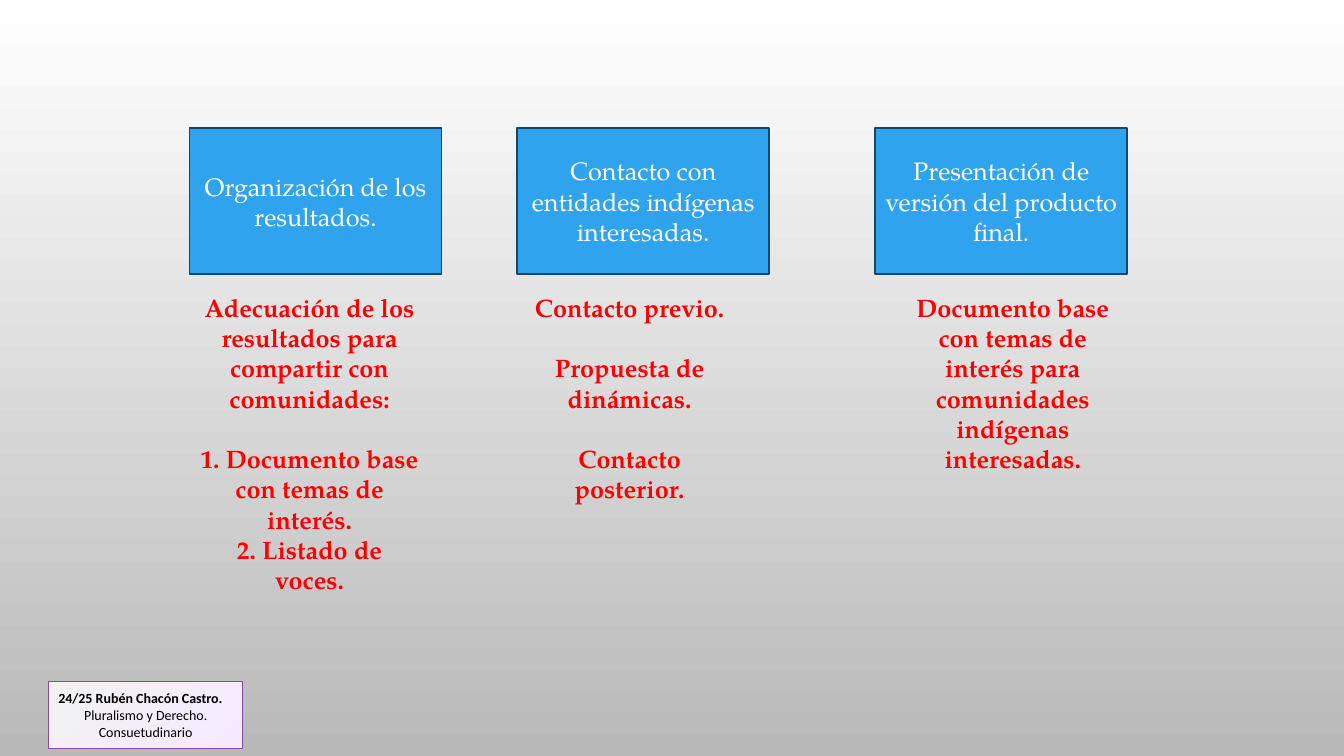
from dataclasses import dataclass

from pptx import Presentation
from pptx.dml.color import RGBColor
from pptx.enum.shapes import MSO_SHAPE
from pptx.enum.text import MSO_ANCHOR, PP_ALIGN
from pptx.util import Inches, Pt

RECTANGLE = MSO_SHAPE.RECTANGLE
MIDDLE, TOP = MSO_ANCHOR.MIDDLE, MSO_ANCHOR.TOP
LEFT, CENTER = PP_ALIGN.LEFT, PP_ALIGN.CENTER

STAGES = [
    {"title": "Organización de los resultados.", "left": 1.88,
     "detail_left": 1.88, "detail_width": 2.38,
     "details": [("Adecuación de los resultados para compartir con comunidades:", False),
                 ("1. Documento base con temas de interés.", True),
                 ("2. Listado de voces.", False)]},
    {"title": "Contacto con entidades indígenas interesadas.", "left": 5.13,
     "detail_left": 5.13, "detail_width": 2.23,
     "details": [("Contacto previo.", False),
                 ("Propuesta de dinámicas.", True),
                 ("Contacto posterior.", True)]},
    {"title": "Presentación de versión del producto final.", "left": 8.68,
     "detail_left": 8.93, "detail_width": 2.23,
     "details": [("Documento base con temas de interés para comunidades "
                  "indígenas interesadas.", False)]},
]
CREDIT = [("24/25 Rubén Chacón Castro.", True, LEFT),
          ("Pluralismo y Derecho. Consuetudinario", False, CENTER)]

SLIDE_WIDTH, SLIDE_HEIGHT = 13.33, 7.5
STAGE_TOP, STAGE_WIDTH, STAGE_HEIGHT = 1.27, 2.5, 1.45
DETAIL_TOP = 2.85
DETAIL_LINE = 0.3
DETAIL_LINES = (10, 7, 6)
DETAIL_PADDING = 0.1
CREDIT_BOX = (0.48, 6.76, 1.93, 0.67)


@dataclass(frozen=True)
class Theme:
    backdrop: tuple = ("FFFFFF", "B9B9B9")
    credit_fill: tuple = ("F2F2F2", "F4E9FF")
    credit_line: str = "834AA7"
    credit_text: str = "000000"
    stage_fill: str = "2FA3EE"
    stage_line: str = "154768"
    stage_text: str = "FFFFFF"
    detail_text: str = "FF0000"
    body_font: str = "TeX Gyre Pagella"
    credit_font: str = "Calibri"
    body_size: float = 18
    credit_size: float = 10
    paragraph_gap: float = 21.6


THEME = Theme()


def color(code):
    return RGBColor.from_string(code)


def shade(fill, codes, angle):
    fill.gradient()
    fill.gradient_angle = angle
    for stop, code, position in zip(fill.gradient_stops, codes, (0, 1)):
        stop.color.rgb = color(code)
        stop.position = position


def add_rectangle(slide, box, line_code, line_width):
    rectangle = slide.shapes.add_shape(RECTANGLE, *map(Inches, box))
    rectangle.shadow.inherit = False
    rectangle.line.color.rgb = color(line_code)
    rectangle.line.width = Pt(line_width)
    return rectangle


def write(frame, paragraphs, font, size, code, anchor):
    frame.word_wrap = True
    frame.vertical_anchor = anchor
    for index, (text, bold, alignment, gap) in enumerate(paragraphs):
        paragraph = frame.add_paragraph() if index else frame.paragraphs[0]
        paragraph.alignment = alignment
        if gap:
            paragraph.space_before = Pt(gap)
        run = paragraph.add_run()
        run.text = text
        run.font.name = font
        run.font.size = Pt(size)
        run.font.bold = bold
        run.font.color.rgb = color(code)


def add_credit(slide):
    credit = add_rectangle(slide, CREDIT_BOX, THEME.credit_line, 0.75)
    shade(credit.fill, THEME.credit_fill, 315)
    write(credit.text_frame, [(*entry, 0) for entry in CREDIT],
          THEME.credit_font, THEME.credit_size, THEME.credit_text, MIDDLE)


def add_stage(slide, stage, lines):
    box = (stage["left"], STAGE_TOP, STAGE_WIDTH, STAGE_HEIGHT)
    heading = add_rectangle(slide, box, THEME.stage_line, 1.25)
    heading.fill.solid()
    heading.fill.fore_color.rgb = color(THEME.stage_fill)
    write(heading.text_frame, [(stage["title"], False, CENTER, 0)],
          THEME.body_font, THEME.body_size, THEME.stage_text, MIDDLE)

    detail_box = (stage["detail_left"], DETAIL_TOP, stage["detail_width"],
                  lines * DETAIL_LINE + DETAIL_PADDING)
    details = slide.shapes.add_textbox(*map(Inches, detail_box))
    write(details.text_frame,
          [(text, True, CENTER, THEME.paragraph_gap if apart else 0)
           for text, apart in stage["details"]],
          THEME.body_font, THEME.body_size, THEME.detail_text, TOP)


def main():
    deck = Presentation()
    deck.slide_width, deck.slide_height = Inches(SLIDE_WIDTH), Inches(SLIDE_HEIGHT)
    slide = deck.slides.add_slide(deck.slide_layouts[6])
    shade(slide.background.fill, THEME.backdrop, 270)
    add_credit(slide)
    for stage, lines in zip(STAGES, DETAIL_LINES):
        add_stage(slide, stage, lines)
    deck.save("out.pptx")


if __name__ == "__main__":
    main()
